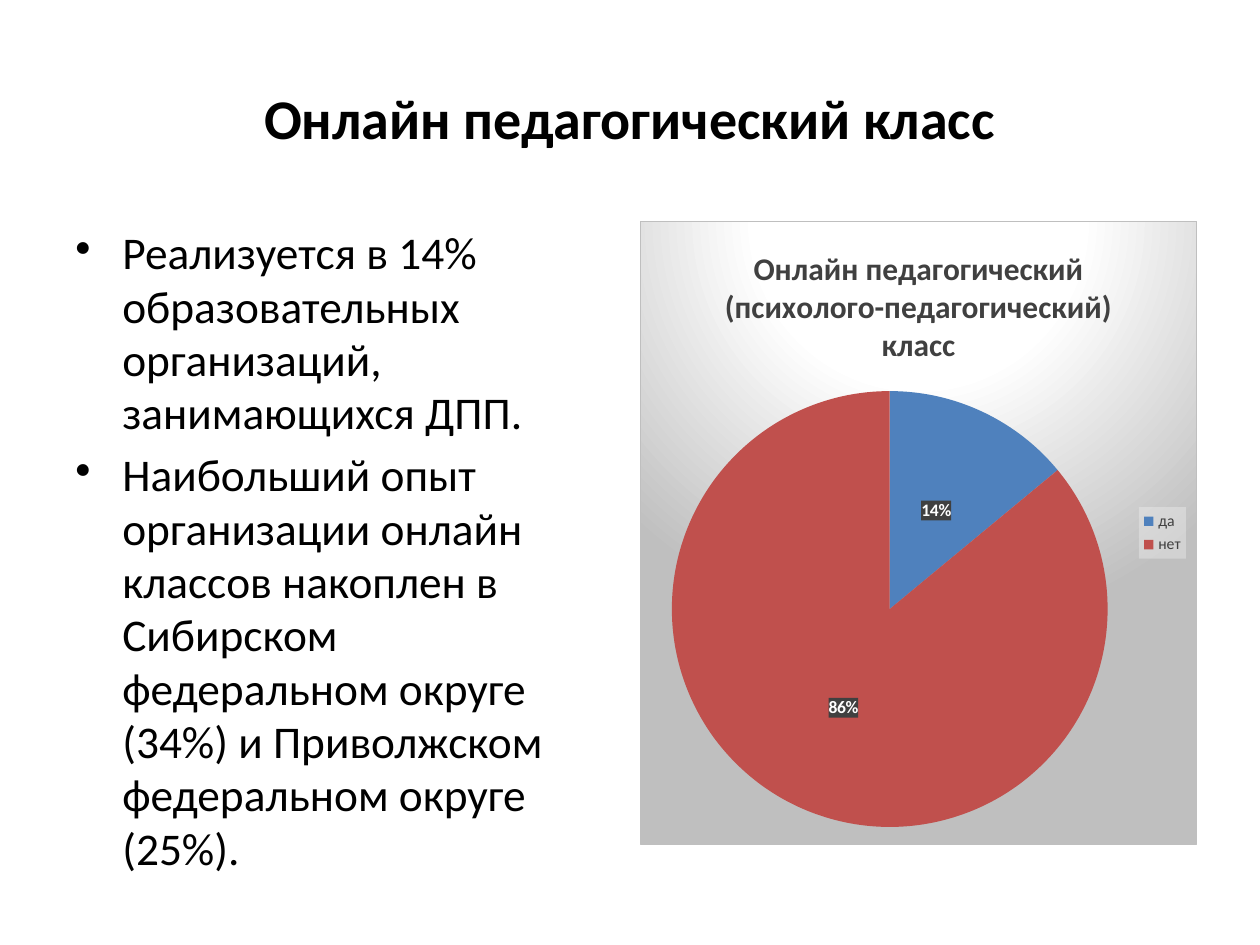
import lxml.etree
import pptx
import pptx.chart.data
import pptx.dml.color
import pptx.enum.chart
import pptx.enum.text
import pptx.oxml
import pptx.oxml.ns
import pptx.util

PX_PER_INCH = 126
BLACK = pptx.dml.color.RGBColor(0x00, 0x00, 0x00)
WHITE = pptx.dml.color.RGBColor(0xFF, 0xFF, 0xFF)
DARK_GRAY = pptx.dml.color.RGBColor(0x40, 0x40, 0x40)
LIGHT_GRAY = pptx.dml.color.RGBColor(0xF2, 0xF2, 0xF2)
SILVER = pptx.dml.color.RGBColor(0xBF, 0xBF, 0xBF)
BLUE = pptx.dml.color.RGBColor(0x4F, 0x81, 0xBD)
RED = pptx.dml.color.RGBColor(0xC0, 0x50, 0x4D)


class SlideBuilder:
    """Holds the text style and the current slide, and adds its elements."""

    font_name = "Calibri"

    def __init__(self, slide):
        self.slide = slide

    @staticmethod
    def px(length):
        return pptx.util.Emu(round(length * 914400 / PX_PER_INCH))

    def place(self, *lengths):
        return [self.px(length) for length in lengths]

    def style(self, font, size, color, bold=False):
        font.name = self.font_name
        font.size = pptx.util.Pt(size)
        font.color.rgb = color
        font.bold = bold

    def text(self, area, lines, size, bold=False):
        box = self.slide.shapes.add_textbox(*self.place(*area))
        frame = box.text_frame
        frame.word_wrap = True
        frame.text = "\n".join(lines)
        for para in frame.paragraphs:
            for span in para.runs:
                self.style(span.font, size, BLACK, bold)
        return frame

    def title(self, area, line):
        frame = self.text(area, [line], 32, True)
        frame.vertical_anchor = pptx.enum.text.MSO_ANCHOR.MIDDLE
        frame.paragraphs[0].alignment = pptx.enum.text.PP_ALIGN.CENTER

    def bullets(self, area, lines):
        indent = self.px(47)
        for para in self.text(area, lines, 25.9).paragraphs:
            para.line_spacing = 0.98
            para.space_before = pptx.util.Pt(5)
            properties = para._p.get_or_add_pPr()
            properties.set("marL", str(indent))
            properties.set("indent", str(-indent))
            bullet = lxml.etree.SubElement(properties, pptx.oxml.ns.qn("a:buChar"))
            bullet.set("char", "•")

    def chart_fill(self, element, content):
        namespaces = pptx.oxml.ns.nsdecls("c", "a")
        properties = pptx.oxml.parse_xml(f"<c:spPr {namespaces}>{content}</c:spPr>")
        element.find(pptx.oxml.ns.qn("c:txPr")).addprevious(properties)

    def clear_fill(self, element, color, percent):
        self.chart_fill(
            element,
            f'<a:solidFill><a:srgbClr val="{color}"><a:alpha val="{percent * 1000}"/>'
            "</a:srgbClr></a:solidFill><a:ln><a:noFill/></a:ln>",
        )

    def pie(self, area, heading, values, colors):
        data = pptx.chart.data.CategoryChartData()
        data.categories = list(values)
        data.add_series("Series 1", list(values.values()))
        chart = self.slide.shapes.add_chart(
            pptx.enum.chart.XL_CHART_TYPE.PIE, *self.place(*area), data
        ).chart
        self.style(chart.font, 10, BLACK)
        stops = "".join(
            f'<a:gs pos="{position * 1000}"><a:srgbClr val="{color}"/></a:gs>'
            for position, color in [(0, WHITE), (39, WHITE), (100, SILVER)]
        )
        self.chart_fill(
            chart._chartSpace,
            f'<a:gradFill><a:gsLst>{stops}</a:gsLst><a:path path="circle">'
            '<a:fillToRect l="50000" t="-80000" r="50000" b="180000"/></a:path></a:gradFill>'
            f'<a:ln w="9525"><a:solidFill><a:srgbClr val="{SILVER}"/></a:solidFill></a:ln>',
        )

        chart.has_title = True
        chart.chart_title.include_in_layout = False
        frame = chart.chart_title.text_frame
        frame.text = heading
        self.style(frame.paragraphs[0].runs[0].font, 18, DARK_GRAY, True)

        chart.has_legend = True
        legend = chart.legend
        legend.position = pptx.enum.chart.XL_LEGEND_POSITION.RIGHT
        legend.include_in_layout = False
        self.style(legend.font, 9, DARK_GRAY)
        self.clear_fill(legend._element, LIGHT_GRAY, 39)

        plot = chart.plots[0]
        plot.vary_by_categories = True
        series = plot.series[0]
        for index, color in enumerate(colors):
            fill = series.points[index].format.fill
            fill.solid()
            fill.fore_color.rgb = color

        labels = series.data_labels
        labels.show_value = False
        labels.show_percentage = True
        labels.number_format = "0%"
        labels.number_format_is_linked = False
        labels.position = pptx.enum.chart.XL_LABEL_POSITION.CENTER
        self.style(labels.font, 10, WHITE, True)
        self.clear_fill(labels._element, DARK_GRAY, 75)


def main():
    deck = pptx.Presentation()
    deck.slide_width = SlideBuilder.px(1260)
    deck.slide_height = SlideBuilder.px(945)
    page = SlideBuilder(deck.slides.add_slide(deck.slide_layouts[6]))
    page.title((63, 38, 1134, 158), "Онлайн педагогический класс")
    page.pie(
        (640, 221, 557, 624),
        "Онлайн педагогический (психолого-педагогический) класс",
        {"да": 14, "нет": 86},
        [BLUE, RED],
    )
    page.bullets(
        (63, 221, 557, 624),
        [
            "Реализуется в 14% образовательных организаций, занимающихся ДПП.",
            "Наибольший опыт организации онлайн классов накоплен в Сибирском "
            "федеральном округе (34%) и Приволжском федеральном округе (25%).",
        ],
    )
    deck.save("out.pptx")


if __name__ == "__main__":
    main()
